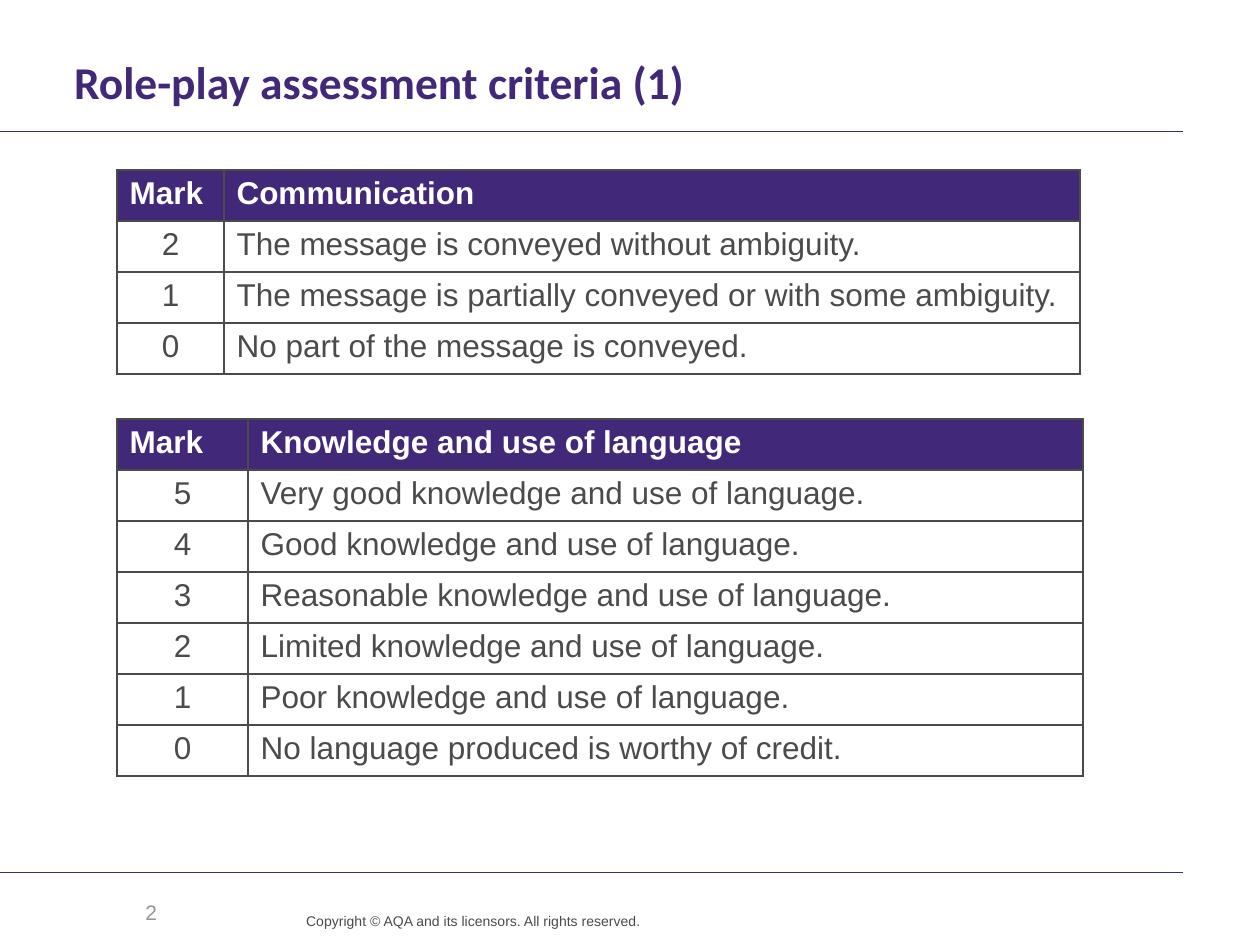
from lxml import etree
from pptx import Presentation
from pptx import util as u
from pptx.dml.color import RGBColor
from pptx.enum import shapes, text
from pptx.oxml import ns

PX = 914400 / 126
PURPLE = RGBColor(0x41, 0x28, 0x78)
GREY = RGBColor(0x4B, 0x4B, 0x4B)
PALE = RGBColor(0x96, 0x96, 0x96)
WHITE = RGBColor(0xFF, 0xFF, 0xFF)
ROW_H = 51
LEFT, CENTRE, RIGHT = text.PP_ALIGN.LEFT, text.PP_ALIGN.CENTER, text.PP_ALIGN.RIGHT
TOP, MIDDLE = text.MSO_ANCHOR.TOP, text.MSO_ANCHOR.MIDDLE

COMMUNICATION = [
    ("Mark", "Communication"),
    ("2", "The message is conveyed without ambiguity."),
    ("1", "The message is partially conveyed or with some ambiguity."),
    ("0", "No part of the message is conveyed."),
]
LANGUAGE = [
    ("Mark", "Knowledge and use of language"),
    ("5", "Very good knowledge and use of language."),
    ("4", "Good knowledge and use of language."),
    ("3", "Reasonable knowledge and use of language."),
    ("2", "Limited knowledge and use of language."),
    ("1", "Poor knowledge and use of language."),
    ("0", "No language produced is worthy of credit."),
]


def px(n):
    return u.Emu(round(n * PX))


def set_text(tf, words, color, size, align=LEFT, name="Arial", bold=False, spacing=None):
    p = tf.paragraphs[0]
    p.alignment = align
    if spacing:
        p.line_spacing = u.Pt(spacing)
    r = p.add_run()
    r.text = words
    for key, value in dict(name=name, size=u.Pt(size), bold=bold).items():
        setattr(r.font, key, value)
    r.font.color.rgb = color


def set_frame(tf, anchor, insets):
    tf.word_wrap = True
    tf.auto_size = text.MSO_AUTO_SIZE.NONE
    tf.vertical_anchor = anchor
    for side, inset in zip(("left", "top", "right", "bottom"), insets):
        setattr(tf, f"margin_{side}", px(inset))


def add_rule(s, y, width):
    line = s.shapes.add_connector(shapes.MSO_CONNECTOR.STRAIGHT, 0, px(y), px(width), px(y))
    line.line.color.rgb = PURPLE
    line.line.width = u.Pt(0.6)
    etree.SubElement(line._element.spPr, ns.qn("a:effectLst"))


def add_title(s, x, y, w, h):
    sp = s.shapes.title
    for key, value in dict(left=x, top=y, width=w, height=h).items():
        setattr(sp, key, px(value))
    set_frame(sp.text_frame, TOP, (0, 0, 13, 0))
    set_text(sp.text_frame, "Role-play assessment criteria (1)", PURPLE, 26,
             name="Calibri", bold=True, spacing=28)
    add_rule(s, y + 72, x + w)


def add_footer(s, x, y, w):
    add_rule(s, y, x + w)
    number = s.shapes.add_textbox(px(x), px(y + 14), px(96), px(50)).text_frame
    set_frame(number, MIDDLE, (13, 6, 13, 6))
    set_text(number, "2", PALE, 12, RIGHT)
    notice = s.shapes.add_textbox(px(x + 198), px(y + 39), px(369), px(33)).text_frame
    set_frame(notice, TOP, (0, 0, 0, 0))
    set_text(notice, "Copyright © AQA and its licensors. All rights reserved.",
             GREY, 8, RIGHT, spacing=10)


def set_borders(cell):
    tcPr = cell._tc.get_or_add_tcPr()
    for i, side in enumerate(("lnL", "lnR", "lnT", "lnB")):
        ln = etree.Element(ns.qn(f"a:{side}"), w=str(u.Pt(1)))
        fill = etree.SubElement(ln, ns.qn("a:solidFill"))
        etree.SubElement(fill, ns.qn("a:srgbClr"), val=str(GREY))
        tcPr.insert(i, ln)


def add_criteria_table(s, x, y, widths, rows):
    frame = s.shapes.add_table(len(rows), len(widths), px(x), px(y),
                               px(sum(widths)), px(ROW_H * len(rows)))
    table = frame.table
    table.horz_banding = False
    for column, width in zip(table.columns, widths):
        column.width = px(width)
    for i, row in enumerate(rows):
        table.rows[i].height = px(ROW_H)
        header = i == 0
        for j, words in enumerate(row):
            cell = table.cell(i, j)
            if header:
                cell.fill.solid()
                cell.fill.fore_color.rgb = PURPLE
            else:
                cell.fill.background()
            set_borders(cell)
            set_text(cell.text_frame, words, WHITE if header else GREY, 18,
                     LEFT if header or j else CENTRE, bold=header)


def main():
    prs = Presentation()
    prs.slide_width, prs.slide_height = px(1260), px(945)
    s = prs.slides.add_slide(prs.slide_layouts[5])
    add_title(s, 74, 60, 1109, 59)
    add_criteria_table(s, 117, 170, (107, 856), COMMUNICATION)
    add_criteria_table(s, 117, 419, (131, 835), LANGUAGE)
    add_footer(s, 74, 873, 1109)
    prs.save("out.pptx")


if __name__ == "__main__":
    main()
